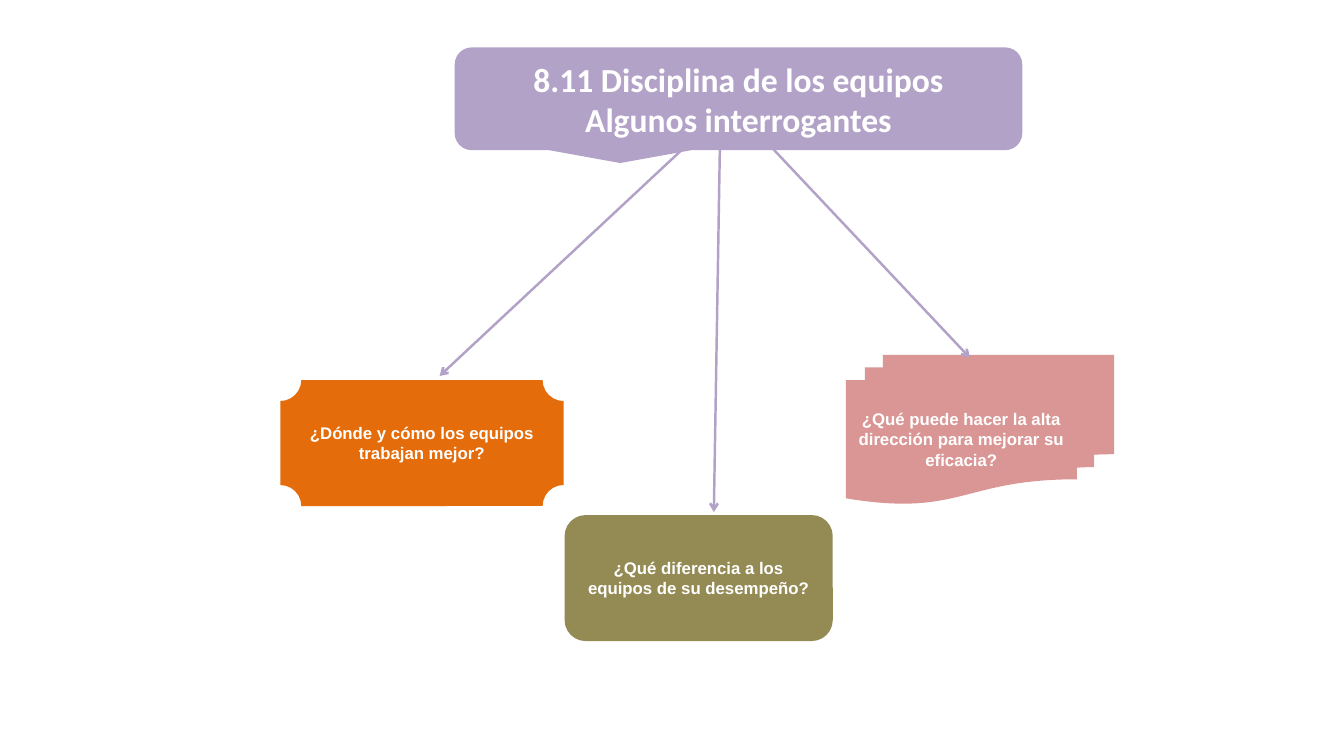
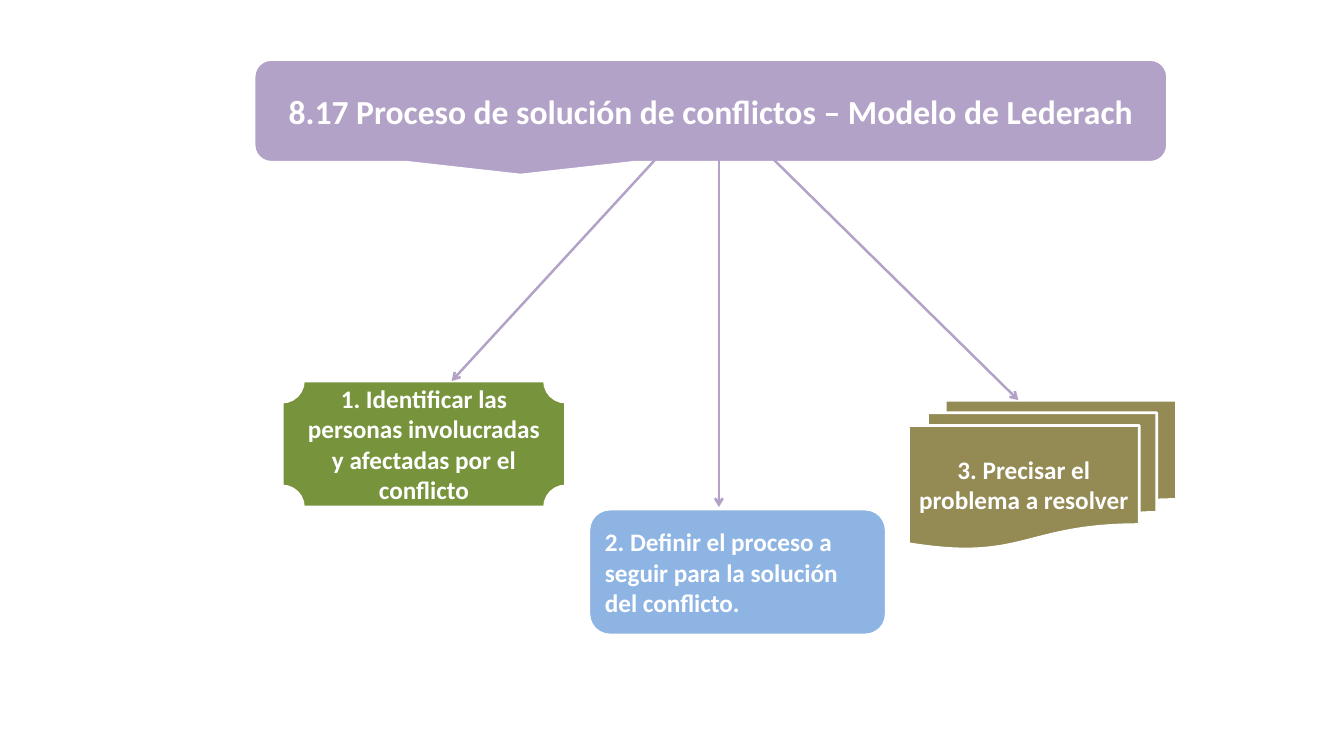
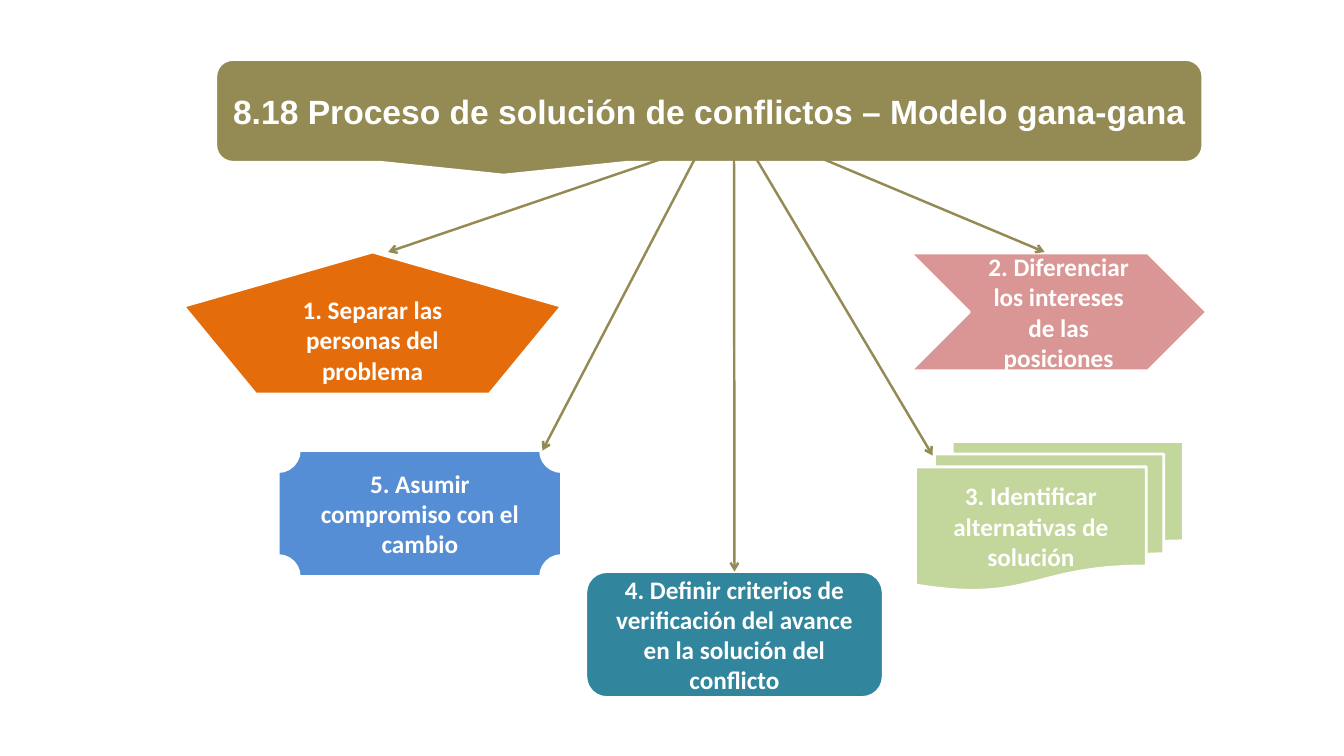
from dataclasses import dataclass

from lxml.etree import SubElement
from pptx import Presentation
from pptx.dml.color import RGBColor
from pptx.enum.shapes import MSO_CONNECTOR, MSO_SHAPE
from pptx.enum.text import MSO_ANCHOR, MSO_AUTO_SIZE, PP_ALIGN
from pptx.oxml.ns import qn
from pptx.util import Inches, Pt


@dataclass(frozen=True)
class Theme:
    white: str = "FFFFFF"
    lavender: str = "B3A2C7"
    rose: str = "D99694"
    olive: str = "948A54"
    orange: str = "E46C0A"
    sky: str = "8EB4E3"
    blue: str = "558ED5"
    green: str = "77933C"
    lime: str = "C3D69B"
    teal: str = "31859C"
    sans: str = "Arial"
    humanist: str = "Calibri"
    title_size: int = 24
    step_size: int = 18
    question_size: int = 12
    outline: float = 2
    arrow: float = 1.75


THEME = Theme()

# Sizes of the boxes, by shape
DOCUMENTS = (2.66, 1.48)
PLAQUE = (2.81, 1.25)
STEP_BOX = (2.95, 1.25)
QUESTION_BOX = (2.66, 1.25)


def write_text(shape, text, font_name, size, alignment=PP_ALIGN.CENTER):
    frame = shape.text_frame
    frame.word_wrap = True
    frame.auto_size = MSO_AUTO_SIZE.NONE
    frame.vertical_anchor = MSO_ANCHOR.MIDDLE
    frame.text = text
    for paragraph in frame.paragraphs:
        paragraph.alignment = alignment
        paragraph.font.name = font_name
        paragraph.font.size = Pt(size)
        paragraph.font.bold = True
        paragraph.font.color.rgb = RGBColor.from_string(THEME.white)


def add_box(slide, kind, position, size, color, outlined):
    bounds = [Inches(value) for value in (*position, *size)]
    shape = slide.shapes.add_shape(kind, *bounds)
    shape.shadow.inherit = False
    shape.fill.solid()
    shape.fill.fore_color.rgb = RGBColor.from_string(color)
    if outlined:
        shape.line.color.rgb = RGBColor.from_string(THEME.white)
        shape.line.width = Pt(THEME.outline)
    else:
        shape.line.fill.background()
    return shape


def add_title(slide, text, position, size, color, font_name, outlined):
    callout = add_box(slide, MSO_SHAPE.ROUNDED_RECTANGULAR_CALLOUT,
                      position, size, color, outlined)
    title = slide.shapes.title
    title.left, title.top = callout.left, callout.top
    title.width, title.height = callout.width, callout.height
    write_text(title, text, font_name, THEME.title_size)
    # The callout lies behind the title text
    title._element.addprevious(callout._element)


def add_arrow(slide, start, end, color, target=None):
    points = [Inches(value) for value in (*start, *end)]
    arrow = slide.shapes.add_connector(MSO_CONNECTOR.STRAIGHT, *points)
    if target is not None:
        arrow.end_connect(target, 0)
    arrow.line.color.rgb = RGBColor.from_string(color)
    arrow.line.width = Pt(THEME.arrow)
    SubElement(arrow.line._get_or_add_ln(), qn("a:tailEnd"), type="arrow")
    SubElement(arrow._element.spPr, qn("a:effectLst"))


def add_diagram_slide(presentation, title, position, size, color, title_font):
    """Return the new slide, with its title callout in place."""
    slide = presentation.slides.add_slide(presentation.slide_layouts[5])
    outlined = color != THEME.lavender or "\n" not in title
    add_title(slide, title, position, size, color, title_font, outlined)
    return slide


def add_step(slide, kind, position, size, color, text, alignment=PP_ALIGN.CENTER):
    shape = add_box(slide, kind, position, size, color, outlined=True)
    write_text(shape, text, THEME.humanist, THEME.step_size, alignment)
    return shape


def add_question(slide, kind, position, size, color, text):
    shape = add_box(slide, kind, position, size, color, outlined=False)
    write_text(shape, text, THEME.sans, THEME.question_size)


def build_team_questions(presentation):
    slide = add_diagram_slide(
        presentation, "8.11 Disciplina de los equipos\nAlgunos interrogantes",
        (4.51, 0.47), (5.63, 1.02), THEME.lavender, THEME.humanist)
    add_question(slide, MSO_SHAPE.FLOWCHART_MULTIDOCUMENT, (8.39, 3.52), DOCUMENTS,
                 THEME.rose, "¿Qué puede hacer la alta dirección para mejorar su eficacia?")
    add_question(slide, MSO_SHAPE.ROUNDED_RECTANGLE, (5.6, 5.11), QUESTION_BOX,
                 THEME.olive, "¿Qué diferencia a los equipos de su desempeño?")
    add_question(slide, MSO_SHAPE.PLAQUE, (2.78, 3.77), PLAQUE,
                 THEME.orange, "¿Dónde y cómo los equipos trabajan mejor?")
    for start, end in (((7.14, 1.46), (7.08, 5.08)),
                       ((6.77, 1.48), (4.36, 3.73)),
                       ((7.67, 1.48), (9.62, 3.55))):
        add_arrow(slide, start, end, THEME.lavender)


def build_lederach_model(presentation):
    slide = add_diagram_slide(
        presentation, "8.17 Proceso de solución de conflictos – Modelo de Lederach",
        (2.52, 0.59), (9.06, 1.02), THEME.lavender, THEME.humanist)
    add_step(slide, MSO_SHAPE.FLOWCHART_MULTIDOCUMENT, (9.01, 3.97), DOCUMENTS,
             THEME.olive, "3. Precisar el problema a resolver")
    add_step(slide, MSO_SHAPE.ROUNDED_RECTANGLE, (5.84, 5.05), STEP_BOX, THEME.sky,
             "2. Definir el proceso a seguir para la solución del conflicto.",
             PP_ALIGN.LEFT)
    add_step(slide, MSO_SHAPE.PLAQUE, (2.8, 3.78), PLAQUE, THEME.green,
             "1. Identificar las personas involucradas y afectadas por el conflicto")
    for start, end in (((7.13, 1.49), (7.13, 5.03)),
                       ((6.64, 1.43), (4.48, 3.78)),
                       ((7.65, 1.56), (10.1, 3.97))):
        add_arrow(slide, start, end, THEME.lavender)


def build_win_win_model(presentation):
    slide = add_diagram_slide(
        presentation, "8.18 Proceso de solución de conflictos – Modelo gana-gana",
        (2.14, 0.59), (9.79, 1.02), THEME.olive, THEME.sans)
    add_step(slide, MSO_SHAPE.FLOWCHART_MULTIDOCUMENT, (9.08, 4.38), DOCUMENTS,
             THEME.lime, "3. Identificar alternativas de solución")
    criteria = add_step(
        slide, MSO_SHAPE.ROUNDED_RECTANGLE, (5.81, 5.67), STEP_BOX, THEME.teal,
        "4. Definir criterios de verificación del avance en la solución del conflicto")
    add_step(slide, MSO_SHAPE.CHEVRON, (9.03, 2.51), (2.94, 1.17),
             THEME.rose, "2. Diferenciar los intereses de las posiciones")
    add_step(slide, MSO_SHAPE.PLAQUE, (2.76, 4.47), PLAQUE,
             THEME.blue, "5. Asumir compromiso con el cambio")
    add_step(slide, MSO_SHAPE.REGULAR_PENTAGON, (1.82, 2.5), (3.75, 1.41),
             THEME.orange, "1. Separar las personas del problema")
    for start, end, target in (((6.67, 1.54), (3.85, 2.5), None),
                               ((7.28, 1.49), (7.28, 5.67), criteria),
                               ((6.91, 1.54), (5.38, 4.47), None),
                               ((7.48, 1.54), (9.25, 4.52), None),
                               ((7.86, 1.45), (10.36, 2.5), None)):
        add_arrow(slide, start, end, THEME.olive, target)


def main():
    presentation = Presentation()
    presentation.slide_width = Inches(13.33)
    presentation.slide_height = Inches(7.5)
    build_team_questions(presentation)
    build_lederach_model(presentation)
    build_win_win_model(presentation)
    presentation.save("out.pptx")


if __name__ == "__main__":
    main()
